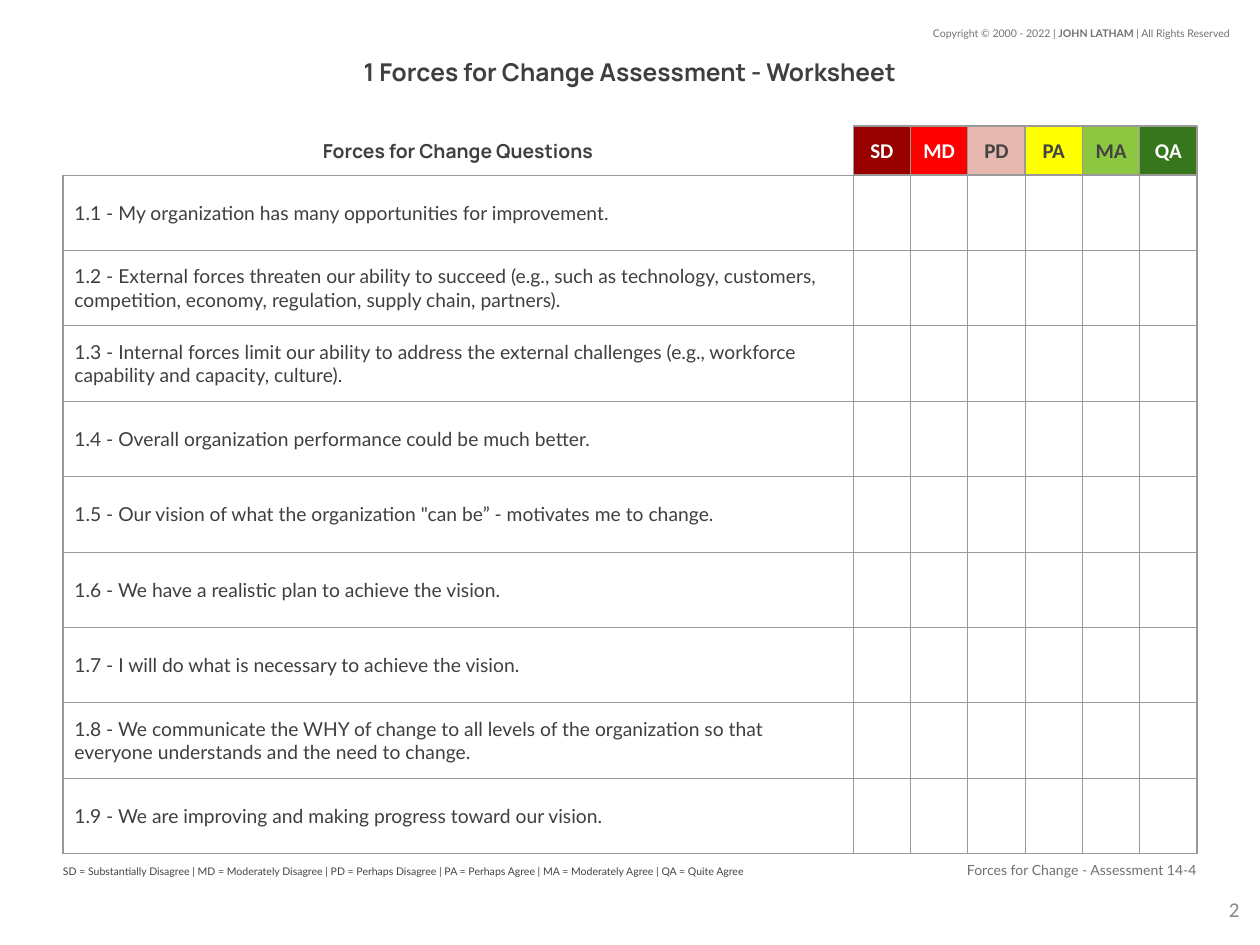
from dataclasses import dataclass

from lxml.etree import SubElement
from pptx import Presentation
from pptx.dml.color import RGBColor
from pptx.enum.shapes import MSO_SHAPE
from pptx.enum.text import MSO_ANCHOR as ANCHOR, PP_ALIGN as ALIGN
from pptx.oxml.ns import qn
from pptx.slide import Slide
from pptx.table import _Cell as Cell
from pptx.text.text import TextFrame
from pptx.util import Cm, Pt

WHITE = RGBColor(0xFF, 0xFF, 0xFF)
INK = RGBColor(0x3F, 0x3F, 0x3F)
DARK = RGBColor(0x43, 0x43, 0x43)
MUTED = RGBColor(0x75, 0x70, 0x70)
PALE = RGBColor(0x88, 0x88, 0x88)
RULE = RGBColor(0x99, 0x99, 0x99)
MAROON = RGBColor(0x98, 0x00, 0x00)
RED = RGBColor(0xFF, 0x00, 0x00)
PINK = RGBColor(0xE6, 0xB8, 0xAF)
YELLOW = RGBColor(0xFF, 0xFF, 0x00)
LIME = RGBColor(0x8D, 0xC6, 0x40)
GREEN = RGBColor(0x38, 0x76, 0x1D)

LEFT, WIDTH, QUESTION_W = 1.27, 22.86, 15.93
HEAD_TOP, HEAD_H, ROW_H = 2.54, 0.99, 1.52
TABLE_TOP = HEAD_TOP + HEAD_H
SCORE_LEFT = LEFT + QUESTION_W
INSET, CELL_INSET, BORDER = 0.25, 0.23, Pt(0.75)


@dataclass(frozen=True)
class Style:
    font: str
    size: float
    color: RGBColor
    bold: bool = False
    align: ALIGN = ALIGN.LEFT


@dataclass(frozen=True)
class Label:
    text: str
    left: float
    top: float
    width: float
    height: float
    style: Style
    inset_left: float = INSET
    inset_right: float = INSET


@dataclass(frozen=True)
class Score:
    code: str
    meaning: str
    fill: RGBColor
    color: RGBColor


SCORES = [
    Score("SD", "Substantially Disagree", MAROON, WHITE),
    Score("MD", "Moderately Disagree", RED, WHITE),
    Score("PD", "Perhaps Disagree", PINK, DARK),
    Score("PA", "Perhaps Agree", YELLOW, DARK),
    Score("MA", "Moderately Agree", LIME, DARK),
    Score("QA", "Quite Agree", GREEN, WHITE),
]
SCORE_W = (WIDTH - QUESTION_W) / len(SCORES)

QUESTIONS = [
    "My organization has many opportunities for improvement.",
    "External forces threaten our ability to succeed (e.g., such as technology, "
    "customers, competition, economy, regulation, supply chain, partners).",
    "Internal forces limit our ability to address the external challenges "
    "(e.g., workforce capability and capacity, culture).",
    "Overall organization performance could be much better.",
    'Our vision of what the organization "can be” - motivates me to change.',
    "We have a realistic plan to achieve the vision.",
    "I will do what is necessary to achieve the vision.",
    "We communicate the WHY of change to all levels of the organization so that "
    "everyone understands and the need to change.",
    "We are improving and making progress toward our vision.",
]
QUESTION_STYLE = Style("Lato", 11, INK)

LABELS = [
    Label("2", 23.72, 17.6, 1.52, 1.45, Style("Calibri", 12, PALE, align=ALIGN.RIGHT)),
    Label("Forces for Change Questions", LEFT, HEAD_TOP, QUESTION_W, HEAD_H,
          Style("Manrope", 11, INK, True, ALIGN.CENTER)),
    Label("1 Forces for Change Assessment - Worksheet", LEFT, 1.07, WIDTH, 0.76,
          Style("Manrope", 14, INK, True, ALIGN.CENTER)),
    Label(" | ".join(f"{score.code} = {score.meaning}" for score in SCORES),
          LEFT, 17.22, QUESTION_W, 0.71, Style("Lato", 6, DARK), inset_left=0),
    Label("Forces for Change - Assessment 14-4", SCORE_LEFT, 17.25, WIDTH - QUESTION_W, 0.56,
          Style("Lato", 8, MUTED, align=ALIGN.RIGHT), inset_right=0),
]


def write(tf: TextFrame, text: str, style: Style) -> None:
    p = tf.paragraphs[0]
    p.alignment = style.align
    p.font.name, p.font.size, p.font.bold = style.font, Pt(style.size), style.bold
    p.font.color.rgb = style.color
    if text:
        p.add_run().text = text


def add_label(s: Slide, label: Label) -> None:
    sp = s.shapes.add_textbox(Cm(label.left), Cm(label.top), Cm(label.width), Cm(label.height))
    tf = sp.text_frame
    tf.word_wrap, tf.vertical_anchor = True, ANCHOR.MIDDLE
    tf.margin_left, tf.margin_right = Cm(label.inset_left), Cm(label.inset_right)
    tf.margin_top = tf.margin_bottom = Cm(INSET)
    write(tf, label.text, label.style)


def add_copyright(s: Slide) -> None:
    tf = s.shapes.add_textbox(Cm(18.49), Cm(0.43), Cm(6.55), Cm(0.51)).text_frame
    tf.word_wrap = True
    write(tf, "Copyright © 2000 - 2022 | ", Style("Lato", 6, MUTED, align=ALIGN.RIGHT))
    p = tf.paragraphs[0]
    r = p.add_run()
    r.text, r.font.bold = "JOHN LATHAM ", True
    p.add_run().text = "| All Rights Reserved"


def add_score(s: Slide, column: int, score: Score) -> None:
    sp = s.shapes.add_shape(MSO_SHAPE.RECTANGLE, Cm(SCORE_LEFT + column * SCORE_W),
                            Cm(HEAD_TOP), Cm(SCORE_W), Cm(HEAD_H))
    sp.shadow.inherit = False
    sp.fill.solid()
    sp.fill.fore_color.rgb = score.fill
    sp.line.color.rgb, sp.line.width = RULE, BORDER
    tf = sp.text_frame
    tf.word_wrap, tf.vertical_anchor = False, ANCHOR.MIDDLE
    tf.margin_left = tf.margin_right = tf.margin_top = tf.margin_bottom = Cm(INSET)
    write(tf, score.code, Style("Calibri", 12, score.color, True, ALIGN.CENTER))


def format_cell(cell: Cell) -> None:
    cell.vertical_anchor = ANCHOR.MIDDLE
    cell.margin_left = cell.margin_right = Cm(CELL_INSET)
    cell.margin_top = cell.margin_bottom = Cm(CELL_INSET)
    tc_pr = cell._tc.get_or_add_tcPr()
    for side in ("a:lnL", "a:lnR", "a:lnT", "a:lnB"):
        ln = SubElement(tc_pr, qn(side), w=str(BORDER))
        SubElement(SubElement(ln, qn("a:solidFill")), qn("a:srgbClr"), val=str(RULE))
    cell.fill.background()


def add_questions(s: Slide) -> None:
    rows = len(QUESTIONS)
    table = s.shapes.add_table(rows, len(SCORES) + 1, Cm(LEFT), Cm(TABLE_TOP),
                               Cm(WIDTH), Cm(rows * ROW_H)).table
    table.first_row = table.horz_banding = False
    for i, column in enumerate(table.columns):
        column.width = Cm(SCORE_W if i else QUESTION_W)
    for number, (row, question) in enumerate(zip(table.rows, QUESTIONS), 1):
        row.height = Cm(ROW_H)
        for i, cell in enumerate(row.cells):
            format_cell(cell)
            write(cell.text_frame, "" if i else f"1.{number} - {question}", QUESTION_STYLE)


def main() -> None:
    """Build the Forces for Change worksheet slide."""
    prs = Presentation()
    prs.slide_width, prs.slide_height = Cm(25.4), Cm(19.05)
    s = prs.slides.add_slide(prs.slide_layouts[6])
    add_copyright(s)
    add_questions(s)
    for column, score in enumerate(SCORES):
        add_score(s, column, score)
    for label in LABELS:
        add_label(s, label)
    prs.save("out.pptx")


if __name__ == "__main__":
    main()
